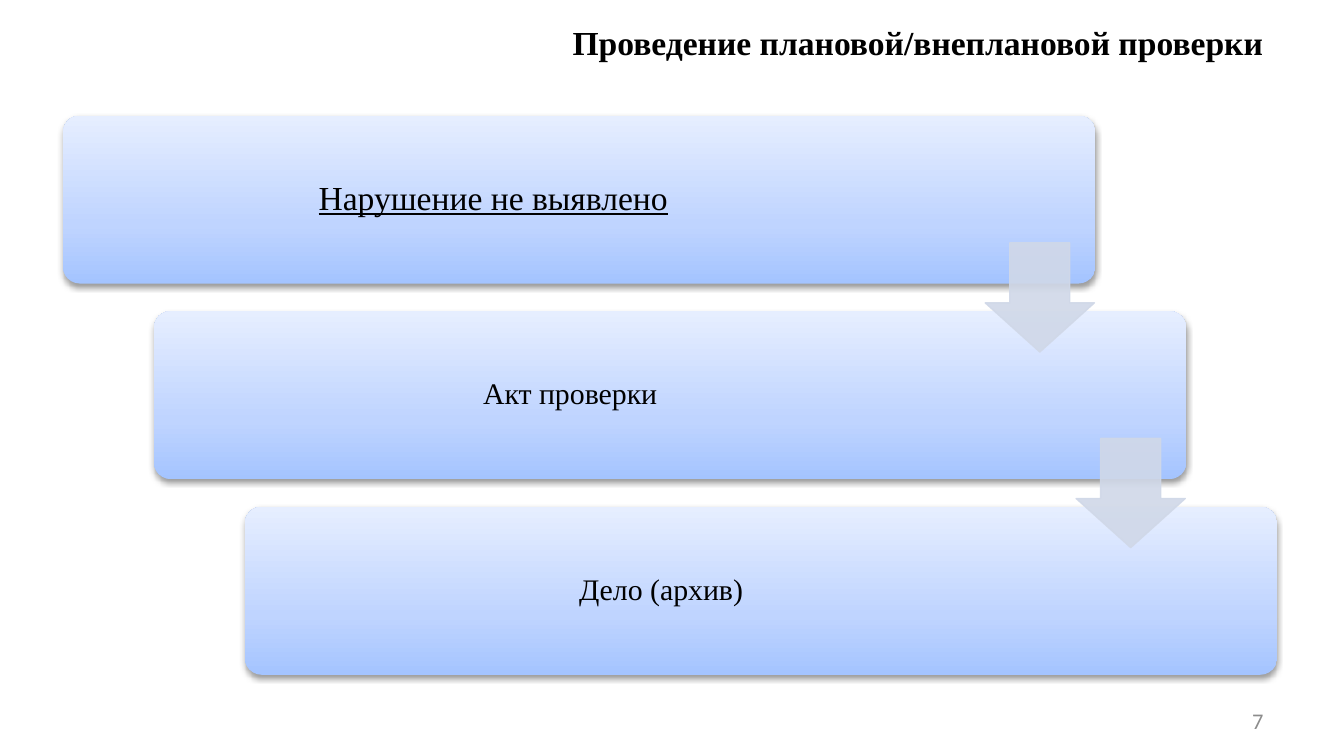
from lxml.etree import SubElement
from pptx import Presentation
from pptx.dml.color import RGBColor
from pptx.enum.shapes import MSO_SHAPE as Preset
from pptx.enum.text import MSO_ANCHOR as Anchor, PP_ALIGN as Align
from pptx.oxml.ns import qn
from pptx.util import Pt

STEPS = [("Нарушение не выявлено", 18, 461, True),
         ("Акт проверки", 16, 446, False),
         ("Дело (архив)", 16, 446, False)]
STEP_LEFT, STEP_TOP = 33.8, 61.9
STEP_WIDTH, STEP_HEIGHT = 553, 90
SHIFT_X, SHIFT_Y = 48.7, 104.8
ARROW_LEFT, ARROW_TOP, ARROW_SIZE = 527.8, 130.1, 58.5


def rgb(value):
    return RGBColor.from_string(value)


def add_color(parent, value, alpha=None):
    color = SubElement(parent, qn("a:srgbClr"), val=value)
    if alpha is not None:
        SubElement(color, qn("a:alpha"), val=str(alpha * 1000))


def write_text(shape, text, size=16, font="Times New Roman", color="000000", bold=False,
               underline=False, align=Align.CENTER, inset=None, line_spacing=None):
    frame = shape.text_frame
    frame.word_wrap = True
    frame.vertical_anchor = Anchor.MIDDLE
    if inset is not None:
        frame.margin_left = frame.margin_right = Pt(inset)
        frame.margin_top = frame.margin_bottom = Pt(inset)
    paragraph = frame.paragraphs[0]
    paragraph.alignment = align
    if line_spacing:
        paragraph.line_spacing = line_spacing
    run = paragraph.add_run()
    run.text = text
    run.font.size = Pt(size)
    run.font.name = font
    run.font.bold = bold
    run.font.underline = underline
    run.font.color.rgb = rgb(color)


class SlideBuilder:
    gradient = [(0, "A4C4FF"), (35, "BFD4FF"), (100, "E6EEFF")]
    arrow_color = "D0D8E8"
    number_color = "8C8C8C"

    def __init__(self, presentation):
        self.slide = presentation.slides.add_slide(presentation.slide_layouts[5])

    def title(self, text, left, top, width, height):
        shape = self.slide.shapes.title
        shape.left, shape.top = Pt(left), Pt(top)
        shape.width, shape.height = Pt(width), Pt(height)
        write_text(shape, text, size=18, bold=True, align=Align.RIGHT)

    def text(self, text, left, top, width, height, **text_format):
        box = self.slide.shapes.add_textbox(Pt(left), Pt(top), Pt(width), Pt(height))
        write_text(box, text, **text_format)

    def panel(self, left, top, width, height):
        """Add a rounded box with a vertical gradient and a soft shadow."""
        shape = self.slide.shapes.add_shape(
            Preset.ROUNDED_RECTANGLE, Pt(left), Pt(top), Pt(width), Pt(height))
        shape.adjustments[0] = 0.1
        shape.fill.gradient()
        shape.fill.gradient_angle = 90
        shape.line.fill.background()
        shape.shadow.inherit = False
        properties = shape.element.spPr
        stops = properties.find(".//" + qn("a:gsLst"))
        for stop in list(stops):
            stops.remove(stop)
        for position, color in self.gradient:
            add_color(SubElement(stops, qn("a:gs"), pos=str(position * 1000)), color)
        shadow = SubElement(
            properties.find(qn("a:effectLst")), qn("a:outerShdw"), blurRad=str(Pt(3.1)),
            dist=str(Pt(1.6)), dir="5400000", rotWithShape="0")
        add_color(shadow, "000000", 38)

    def down_arrow(self, left, top, size):
        shape = self.slide.shapes.add_shape(
            Preset.DOWN_ARROW, Pt(left), Pt(top), Pt(size), Pt(size))
        shape.adjustments[0], shape.adjustments[1] = 0.55, 0.45
        shape.shadow.inherit = False
        shape.line.width = Pt(0.75)
        for fill in (shape.fill, shape.line.fill):
            fill.solid()
            fill.fore_color.rgb = rgb(self.arrow_color)
        for color in shape.element.spPr.iter(qn("a:srgbClr")):
            SubElement(color, qn("a:alpha"), val="90000")


def main():
    presentation = Presentation()
    presentation.slide_width, presentation.slide_height = Pt(720), Pt(405)
    builder = SlideBuilder(presentation)
    builder.title("Проведение плановой/внеплановой проверки", 36, 0, 648, 45)
    for index, (text, size, text_width, underline) in enumerate(STEPS):
        left, top = STEP_LEFT + index * SHIFT_X, STEP_TOP + index * SHIFT_Y
        builder.panel(left, top, STEP_WIDTH, STEP_HEIGHT)
        builder.text(text, left, top, text_width, STEP_HEIGHT, size=size,
                     underline=underline, inset=5, line_spacing=0.9)
    for index in range(len(STEPS) - 1):
        builder.down_arrow(ARROW_LEFT + index * SHIFT_X, ARROW_TOP + index * SHIFT_Y,
                           ARROW_SIZE)
    builder.text("7", 516, 375, 168, 21.6, size=12, font="Calibri",
                 color=builder.number_color, align=Align.RIGHT)
    presentation.save("out.pptx")


if __name__ == "__main__":
    main()
